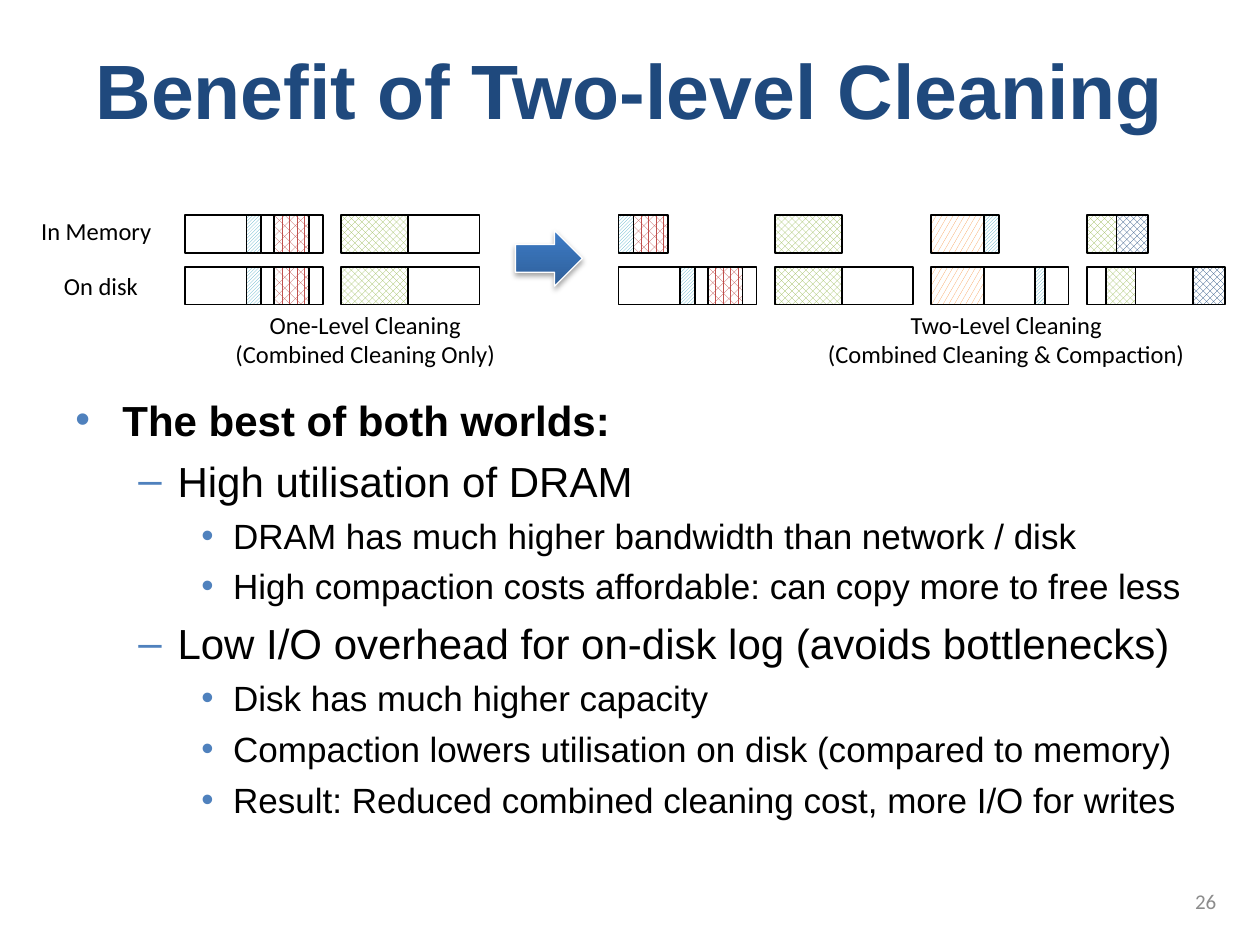
from lxml import etree
from pptx import Presentation
from pptx.dml.color import RGBColor
from pptx.enum.dml import MSO_PATTERN as Pattern
from pptx.enum.shapes import MSO_SHAPE as Shape
from pptx.enum.text import MSO_ANCHOR as Anchor, PP_ALIGN as Align
from pptx.oxml import parse_xml
from pptx.oxml.ns import nsdecls, qn
from pptx.util import Cm, Pt

ACCENT = "4F81BD"
BLACK = "000000"
WHITE = "FFFFFF"
ENTRY_FILLS = {
    "blue": (Pattern.DARK_UPWARD_DIAGONAL, "4BACC6"),
    "red": (Pattern.PERCENT_60, "C0504D"),
    "green": (Pattern.LARGE_CHECKER_BOARD, "9BBB59"),
    "orange": (Pattern.LARGE_CONFETTI, "F79646"),
    "navy": (Pattern.LARGE_CHECKER_BOARD, "1F497D"),
}
DISK_SEGMENTS = [
    [("free", 1.24), ("blue", 0.3), ("free", 0.26), ("red", 0.7), ("free", 0.28)],
    [("green", 1.35), ("free", 1.44)],
    [("orange", 1.07), ("free", 1.02), ("blue", 0.2), ("free", 0.48)],
    [("free", 0.38), ("green", 0.59), ("free", 1.16), ("navy", 0.64)],
]
COMPACTED_SEGMENTS = [
    [("blue", 0.3), ("red", 0.7)],
    [("green", 1.35)],
    [("orange", 1.07), ("blue", 0.3)],
    [("green", 0.59), ("navy", 0.64)],
]
SEGMENT_PITCH = 3.15
ROW_PITCH = 1.04
ROW_HEIGHT = 0.76
LEVELS = [
    {"indent": 0.95, "hanging": 0.95, "bullet": "•", "size": 24, "before": 6},
    {"indent": 2.06, "hanging": 0.79, "bullet": "–", "size": 24, "before": 6},
    {"indent": 3.18, "hanging": 0.64, "bullet": "•", "size": 20, "before": 5},
]
POINTS = [
    (0, "The best of both worlds:"),
    (1, "High utilisation of DRAM"),
    (2, "DRAM has much higher bandwidth than network / disk"),
    (2, "High compaction costs affordable: can copy more to free less"),
    (1, "Low I/O overhead for on-disk log (avoids bottlenecks)"),
    (2, "Disk has much higher capacity"),
    (2, "Compaction lowers utilisation on disk (compared to memory)"),
    (2, "Result: Reduced combined cleaning cost, more I/O for writes"),
]


def rgb(value):
    """Return the colour of a hex string."""
    return RGBColor.from_string(value)


def apply_format(target, values):
    """Set every attribute named in a dict of format values."""
    for name, value in values.items():
        setattr(target, name, value)


def write_text(paragraph, text, color=BLACK, **font):
    """Fill a paragraph and format its runs."""
    paragraph.text = text
    for run in paragraph.runs:
        apply_format(run.font, font)
        run.font.color.rgb = rgb(color)


def add_box(slide, box, **frame):
    """Add an empty text box and return its text frame."""
    text_frame = slide.shapes.add_textbox(*map(Cm, box)).text_frame
    apply_format(text_frame, {"word_wrap": True, **frame})
    return text_frame


def add_label(slide, box, text, align, wrap=False, anchor=Anchor.TOP, **font):
    """Add a text box holding one formatted paragraph."""
    paragraph = add_box(slide, box, word_wrap=wrap, vertical_anchor=anchor).paragraphs[0]
    paragraph.alignment = align
    write_text(paragraph, text, **{"name": "Calibri", "size": Pt(14), **font})


def add_bullet(paragraph, level):
    """Give a paragraph its hanging indent and coloured bullet."""
    properties = paragraph._p.get_or_add_pPr()
    properties.set("marL", str(Cm(level["indent"])))
    properties.set("indent", str(-Cm(level["hanging"])))
    color = etree.SubElement(properties, qn("a:buClr"))
    etree.SubElement(color, qn("a:srgbClr"), val=ACCENT)
    etree.SubElement(properties, qn("a:buFont"), typeface="Arial")
    etree.SubElement(properties, qn("a:buChar"), char=level["bullet"])


def add_points(slide, box):
    """Write the bulleted outline."""
    text_frame = add_box(slide, box)
    for index, (depth, text) in enumerate(POINTS):
        paragraph = text_frame.add_paragraph() if index else text_frame.paragraphs[0]
        level = LEVELS[depth]
        apply_format(paragraph, {"level": depth, "space_before": Pt(level["before"])})
        add_bullet(paragraph, level)
        write_text(paragraph, text, name="Arial", size=Pt(level["size"]), bold=depth == 0)


def add_entry(slide, box, kind):
    """Draw one stretch of a log segment, free or live."""
    shape = slide.shapes.add_shape(Shape.RECTANGLE, *map(Cm, box))
    shape.shadow.inherit = False
    shape.line.color.rgb = rgb(BLACK)
    shape.line.width = Pt(1)
    if kind == "free":
        shape.fill.solid()
        shape.fill.fore_color.rgb = rgb(WHITE)
    else:
        pattern, color = ENTRY_FILLS[kind]
        shape.fill.patterned()
        shape.fill.pattern = pattern
        shape.fill.fore_color.rgb = rgb(color)
        shape.fill.back_color.rgb = rgb(WHITE)


def add_log(slide, left, top, memory, disk):
    """Draw the memory row above the disk row."""
    for row, segments in enumerate((memory, disk)):
        for column, entries in enumerate(segments):
            entry_left = left + column * SEGMENT_PITCH
            for kind, width in entries:
                box = (entry_left, top + row * ROW_PITCH, width, ROW_HEIGHT)
                add_entry(slide, box, kind)
                entry_left += width


def add_arrow(slide, box):
    """Draw the shaded arrow between the two logs."""
    shape = slide.shapes.add_shape(Shape.RIGHT_ARROW, *map(Cm, box))
    shape.line.color.rgb = rgb(WHITE)
    shape.line.width = Pt(0.75)
    shape.fill.gradient()
    shape.fill.gradient_angle = 90
    for stop, color in zip(shape.fill.gradient_stops, ("2F5F99", "3D7CC7")):
        stop.color.rgb = rgb(color)
    shape._element.spPr.append(parse_xml(
        f'<a:effectLst {nsdecls("a")}><a:outerShdw blurRad="40000" dist="23000" '
        'dir="5400000" rotWithShape="0"><a:srgbClr val="000000">'
        '<a:alpha val="35000"/></a:srgbClr></a:outerShdw></a:effectLst>'))


def add_diagram(slide, left, top):
    """Compare the logs of one-level and two-level cleaning."""
    add_label(slide, (left, top - 0.1, 2.92, 0.91), "In Memory", Align.LEFT)
    add_label(slide, (left + 0.46, top + 0.99, 2.13, 0.91), "On disk", Align.LEFT)
    add_log(slide, left + 3.15, top, DISK_SEGMENTS[:2], DISK_SEGMENTS[:2])
    add_log(slide, left + 11.89, top, COMPACTED_SEGMENTS, DISK_SEGMENTS)
    add_arrow(slide, (left + 9.81, top + 0.31, 1.35, 1.12))
    add_label(slide, (left + 3.89, top + 1.78, 5.79, 1.45),
              "One-Level Cleaning\n(Combined Cleaning Only)", Align.CENTER)
    add_label(slide, (left + 15.83, top + 1.78, 7.75, 1.45),
              "Two-Level Cleaning\n(Combined Cleaning & Compaction)", Align.CENTER)


def main():
    """Build and save the slide."""
    presentation = Presentation()
    apply_format(presentation, {"slide_width": Cm(25.4), "slide_height": Cm(19.05)})
    slide = presentation.slides.add_slide(presentation.slide_layouts[6])
    add_label(slide, (1.27, 0.2, 22.86, 3.18), "Benefit of Two-level Cleaning",
              Align.CENTER, True, Anchor.MIDDLE,
              name="Arial", size=Pt(44), bold=True, color="1F497D")
    add_points(slide, (1.27, 7.82, 22.86, 11))
    add_label(slide, (18.85, 17.65, 5.92, 1.02), "26", Align.RIGHT, True, Anchor.MIDDLE,
              size=Pt(12), color="8C8C8C")
    add_diagram(slide, 0.58, 4.34)
    presentation.save("out.pptx")


if __name__ == "__main__":
    main()
